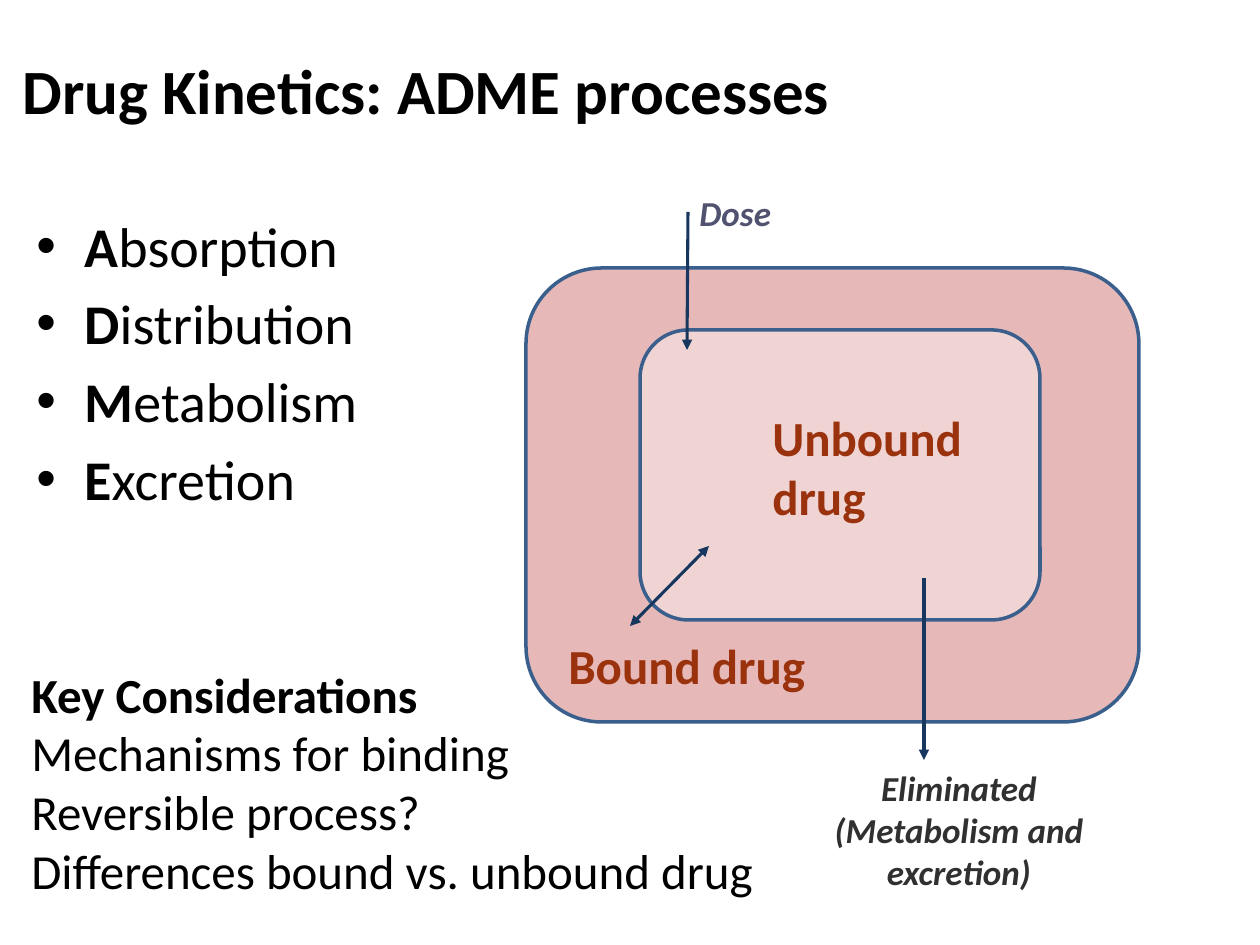
import pptx
import pptx.dml.color
import pptx.enum.shapes
import pptx.enum.text
import pptx.oxml.ns
import pptx.util
from lxml import etree

PX_PER_INCH = 126
FONT = "Calibri"
COLORS = {
    "text": "000000",
    "outer": "E6B9B8",
    "inner": "FFFFFF",
    "outline": "3A5F8C",
    "arrow": "17375E",
    "dose": "51526F",
    "eliminated": "303030",
    "drug": "9B320E",
}
ALIGN = pptx.enum.text.PP_ALIGN
ANCHOR = pptx.enum.text.MSO_ANCHOR


def px(length):
    return pptx.util.Emu(round(length * 914400 / PX_PER_INCH))


def rgb(name):
    return pptx.dml.color.RGBColor.from_string(COLORS[name])


def add_child(parent, tag, **attributes):
    return etree.SubElement(parent, pptx.oxml.ns.qn(tag), attributes)


def add_bullet(paragraph, indent):
    properties = paragraph._p.get_or_add_pPr()
    properties.set("marL", str(px(indent)))
    properties.set("indent", str(-px(indent)))
    add_child(properties, "a:buFont", typeface="Arial")
    add_child(properties, "a:buChar", char="•")


def add_text(slide, box, paragraphs, size, color="text", italic=False, wrap=True,
             align=ALIGN.LEFT, anchor=ANCHOR.TOP, bullet_indent=0, space_before=0):
    """Each paragraph is a list of (text, bold) runs."""
    frame = slide.shapes.add_textbox(*map(px, box)).text_frame
    frame.word_wrap = wrap
    frame.vertical_anchor = anchor
    for index, runs in enumerate(paragraphs):
        paragraph = frame.add_paragraph() if index else frame.paragraphs[0]
        paragraph.alignment = align
        if index and space_before:
            paragraph.space_before = pptx.util.Pt(space_before)
        if bullet_indent:
            add_bullet(paragraph, bullet_indent)
        for text, bold in runs:
            run = paragraph.add_run()
            run.text = text
            run.font.name = FONT
            run.font.size = pptx.util.Pt(size)
            run.font.bold = bold
            run.font.italic = italic
            run.font.color.rgb = rgb(color)


def add_compartment(slide, box, fill, opacity=100):
    shape = slide.shapes.add_shape(
        pptx.enum.shapes.MSO_SHAPE.ROUNDED_RECTANGLE, *map(px, box))
    shape.shadow.inherit = False
    shape.fill.solid()
    shape.fill.fore_color.rgb = rgb(fill)
    shape.line.color.rgb = rgb("outline")
    shape.line.width = pptx.util.Pt(2)
    if opacity < 100:
        color = shape._element.spPr.find(".//" + pptx.oxml.ns.qn("a:srgbClr"))
        add_child(color, "a:alpha", val=str(opacity * 1000))


def add_arrow(slide, start, end, both_ends=False):
    connector = slide.shapes.add_connector(
        pptx.enum.shapes.MSO_CONNECTOR.STRAIGHT, *map(px, start + end))
    connector.line.color.rgb = rgb("arrow")
    connector.line.width = pptx.util.Pt(1.75)
    line = connector.line._get_or_add_ln()
    if both_ends:
        add_child(line, "a:headEnd", type="triangle")
    add_child(line, "a:tailEnd", type="triangle")
    add_child(connector._element.spPr, "a:effectLst")


def main():
    presentation = pptx.Presentation()
    presentation.slide_width = px(1260)
    presentation.slide_height = px(945)
    slide = presentation.slides.add_slide(presentation.slide_layouts[6])

    # Title and the four processes
    add_text(slide, (10, 10, 1134, 158), [[("Drug Kinetics: ADME processes", True)]],
             36, anchor=ANCHOR.MIDDLE)
    processes = ["Absorption", "Distribution", "Metabolism", "Excretion"]
    add_text(slide, (24, 205, 431, 388),
             [[(word[0], True), (word[1:], False)] for word in processes],
             32, bullet_indent=48, space_before=6)

    # Compartments
    add_compartment(slide, (526, 268, 613, 454), "outer")
    add_compartment(slide, (640, 330, 400, 290), "inner", opacity=39)

    # Drug movement
    add_arrow(slide, (709, 546), (630, 626), both_ends=True)
    add_arrow(slide, (688, 212), (687, 350))
    add_arrow(slide, (924, 578), (924, 760))

    # Diagram labels
    add_text(slide, (687, 185, 145, 55), [[("Dose", True)]], 20, "dose", italic=True)
    add_text(slide, (814, 760, 290, 140),
             [[("Eliminated (Metabolism and excretion)", True)]],
             20, "eliminated", italic=True, align=ALIGN.CENTER)
    add_text(slide, (760, 401, 239, 131), [[("Unbound drug", True)]], 28, "drug")
    add_text(slide, (556, 629, 277, 72), [[("Bound drug", True)]], 28, "drug")

    # Key considerations
    add_text(slide, (19, 658, 757, 251),
             [[("Key Considerations", True)],
              [("Mechanisms for binding", False)],
              [("Reversible process?", False)],
              [("Differences bound vs. unbound drug", False)]],
             28, wrap=False)

    presentation.save("out.pptx")


if __name__ == "__main__":
    main()
